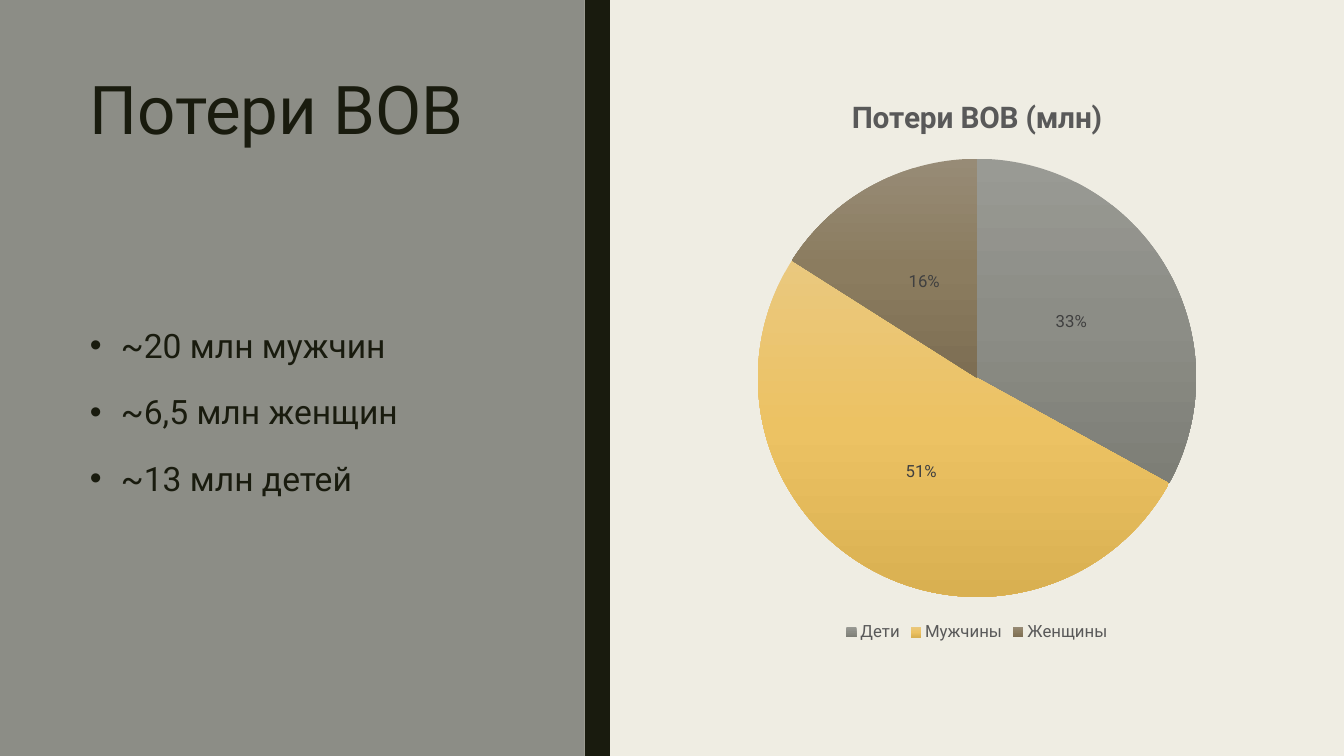
from copy import deepcopy
from lxml import etree
from pptx import Presentation
from pptx.chart.data import CategoryChartData as Data
from pptx.dml.color import RGBColor as RGB
from pptx.enum.chart import XL_CHART_TYPE as Kind, XL_LABEL_POSITION as Spot
from pptx.enum.chart import XL_LEGEND_POSITION as Side
from pptx.enum.shapes import MSO_SHAPE as Shape
from pptx.enum.text import MSO_ANCHOR as Anchor, MSO_AUTO_SIZE as Fit, PP_ALIGN as Align
from pptx.oxml.ns import qn
from pptx.util import Inches, Pt

DARK = "191B0E"
GREY = "595959"


def style(font, size, color, bold=False):
    font.name = "Roboto"
    font.size = Pt(size)
    font.bold = bold
    font.color.rgb = RGB.from_string(color)


def place(box, top, height):
    box.left, box.top = Inches(0.79), Inches(top)
    box.width, box.height = Inches(4.22), Inches(height)
    frame = box.text_frame
    frame.word_wrap = True
    frame.auto_size = Fit.NONE
    frame.vertical_anchor = Anchor.TOP
    return frame


deck = Presentation()
deck.slide_width, deck.slide_height = Inches(13.33), Inches(7.5)
slide = deck.slides.add_slide(deck.slide_layouts[1])
slide.background.fill.solid()
slide.background.fill.fore_color.rgb = RGB.from_string("EFEDE3")
title, body = slide.placeholders

# Side panel and its dark edge, behind the text
for left, width, color in [(0, 5.8, "8C8D86"), (5.8, 0.25, DARK)]:
    panel = slide.shapes.add_shape(
        Shape.RECTANGLE, Inches(left), 0, Inches(width), Inches(7.5))
    panel.shadow.inherit = False
    panel.fill.solid()
    panel.fill.fore_color.rgb = RGB.from_string(color)
    panel.line.fill.background()
    title._element.addprevious(panel._element)

frame = place(title, 0.75, 2.36)
frame.text = "Потери ВОВ"
head = frame.paragraphs[0]
head.alignment = Align.LEFT
head.line_spacing = 0.84
style(head.font, 48, DARK)

frame = place(body, 3.12, 3.29)
frame.text = "~20 млн мужчин\n~6,5 млн женщин\n~13 млн детей"
for item in frame.paragraphs:
    props = item._p.get_or_add_pPr()
    props.set("marL", str(Inches(0.31)))
    props.set("indent", str(-Inches(0.31)))
    etree.SubElement(props, qn("a:buFont")).set("typeface", "Arial")
    etree.SubElement(props, qn("a:buChar")).set("char", "•")
    item.alignment = Align.LEFT
    item.line_spacing = 1.13
    item.space_before = Pt(0)
    item.space_after = Pt(15)
    style(item.font, 24, DARK)

# Pie of losses
name = "Потери ВОВ (млн)"
data = Data()
data.categories = ["Дети", "Мужчины", "Женщины"]
data.add_series(name, [33, 51, 16])
chart = slide.shapes.add_chart(
    Kind.PIE, Inches(6.84), Inches(0.75), Inches(5.7), Inches(5.66), data).chart
style(chart.font, 10, "000000")

chart.has_title = True
chart.chart_title.include_in_layout = False
chart.chart_title.text_frame.text = name
style(chart.chart_title.text_frame.paragraphs[0].font, 21.3, GREY, True)

chart.has_legend = True
chart.legend.position = Side.BOTTOM
chart.legend.include_in_layout = False
style(chart.legend.font, 12, GREY)

plot = chart.plots[0]
plot.vary_by_categories = True
plot.has_data_labels = True
labels = plot.data_labels
labels.show_percentage = True
labels.show_value = False
labels.number_format = "0%"
labels.number_format_is_linked = False
labels.position = Spot.CENTER
style(labels.font, 12, "404040")

shades = [
    ("999A94", "8C8D86", "7D7E76"),
    ("EAC87E", "ECC263", "D9B051"),
    ("978B76", "8B7C5F", "7D6E53"),
]
for i, colors in enumerate(shades):
    form = plot.series[0].points[i].format
    form.line.fill.background()
    fill = form.fill
    fill.gradient()
    fill.gradient_angle = 270
    first = fill.gradient_stops[0]._gs
    first.addnext(deepcopy(first))
    for stop, spot, color in zip(fill.gradient_stops, (0, 0.5, 1), colors):
        stop.position = spot
        stop.color.rgb = RGB.from_string(color)

deck.save("out.pptx")
